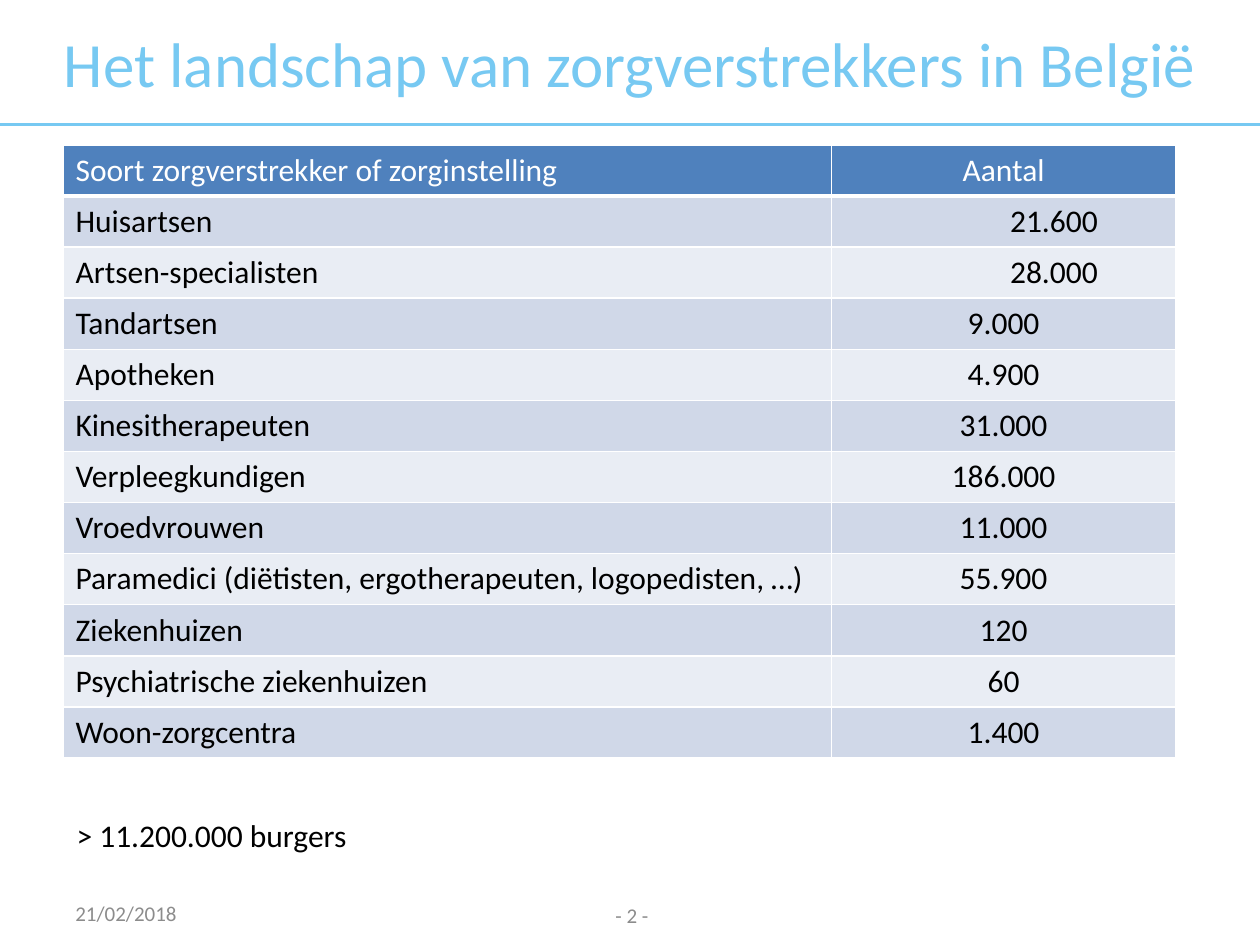
from pptx import Presentation, util as u
from pptx.dml.color import RGBColor
from pptx.enum import shapes, text
from pptx.oxml.ns import qn
from lxml import etree

LEFT, MID = text.PP_ALIGN.LEFT, text.PP_ALIGN.CENTER
SKY, GREY = "77C9F2", "8C8C8C"


def color(code):
    return RGBColor.from_string(code)


def write(frame, words, size, code, align=LEFT):
    par = frame.paragraphs[0]
    par.alignment = align
    run = par.add_run()
    run.text = words
    run.font.name = "Calibri"
    run.font.size = u.Pt(size)
    run.font.bold = False
    run.font.color.rgb = color(code)
    return par


deck = Presentation()
deck.slide_width, deck.slide_height = u.Inches(10), u.Inches(7.5)
slide = deck.slides.add_slide(deck.slide_layouts[6])

# Rule under the title
y = u.Inches(0.99)
rule = slide.shapes.add_connector(shapes.MSO_CONNECTOR.STRAIGHT, 0, y, u.Inches(10), y)
rule.line.color.rgb = color(SKY)
rule.line.width = u.Pt(1.5)
etree.SubElement(rule._element.spPr, qn("a:effectLst"))

# Title, date, page number and closing remark
anchor = text.MSO_ANCHOR
notes = [
    ("Het landschap van zorgverstrekkers in België", 0, 0, 10, 0.99, 36, SKY, MID, anchor.MIDDLE, True),
    ("21/02/2018", 0.5, 7.05, 2.33, 0.4, 12, GREY, LEFT, anchor.MIDDLE, True),
    ("- 2 -", 3.85, 7.06, 2.33, 0.4, 12, GREY, MID, anchor.MIDDLE, True),
    ("> 11.200.000 burgers", 0.51, 6.43, 2.37, 0.4, 18, "000000", LEFT, anchor.TOP, False),
]
for words, x, y, w, h, size, code, align, place, wrap in notes:
    box = slide.shapes.add_textbox(*map(u.Inches, (x, y, w, h)))
    box.text_frame.word_wrap = wrap
    box.text_frame.vertical_anchor = place
    if not wrap:
        box.text_frame.auto_size = text.MSO_AUTO_SIZE.SHAPE_TO_FIT_TEXT
    write(box.text_frame, words, size, code, align)

# Table of care providers; a leading tab aligns on the decimal stop
rows = [
    ("Soort zorgverstrekker of zorginstelling", "Aantal"),
    ("Huisartsen", "\t21.600"),
    ("Artsen-specialisten", "\t28.000"),
    ("Tandartsen", "9.000"),
    ("Apotheken", "4.900"),
    ("Kinesitherapeuten", "31.000"),
    ("Verpleegkundigen", "186.000"),
    ("Vroedvrouwen", "11.000"),
    ("Paramedici (diëtisten, ergotherapeuten, logopedisten, …)", "55.900"),
    ("Ziekenhuizen", "120"),
    ("Psychiatrische ziekenhuizen", "60"),
    ("Woon-zorgcentra", "1.400"),
]
high = u.Inches(4.87)
grid = slide.shapes.add_table(len(rows), 2, u.Inches(0.5), u.Inches(1.15), u.Inches(8.83), high).table
for col, w in zip(grid.columns, (6.1, 2.73)):
    col.width = u.Inches(w)

for r, row in enumerate(rows):
    grid.rows[r].height = high // len(rows)
    for c, words in enumerate(row):
        cell = grid.cell(r, c)
        tab = words.startswith("\t")
        align = MID if c and not tab else LEFT
        par = write(cell.text_frame, words, 18, "000000" if r else "FFFFFF", align)
        if tab:
            stops = etree.SubElement(par._p.get_or_add_pPr(), qn("a:tabLst"))
            etree.SubElement(stops, qn("a:tab"), pos=str(u.Inches(1.57)), algn="dec")

        # White borders, heavier below the header
        props = cell._tc.get_or_add_tcPr()
        for side in "LRTB":
            wide = 3 if r == 0 and side == "B" else 1
            edge = etree.SubElement(props, qn("a:ln" + side), w=str(u.Pt(wide)))
            ink = etree.SubElement(edge, qn("a:solidFill"))
            etree.SubElement(ink, qn("a:srgbClr"), val="FFFFFF")
        cell.fill.solid()
        band = "D0D8E8" if r % 2 else "E9EDF4"
        cell.fill.fore_color.rgb = color(band if r else "4F81BD")

deck.save("out.pptx")
